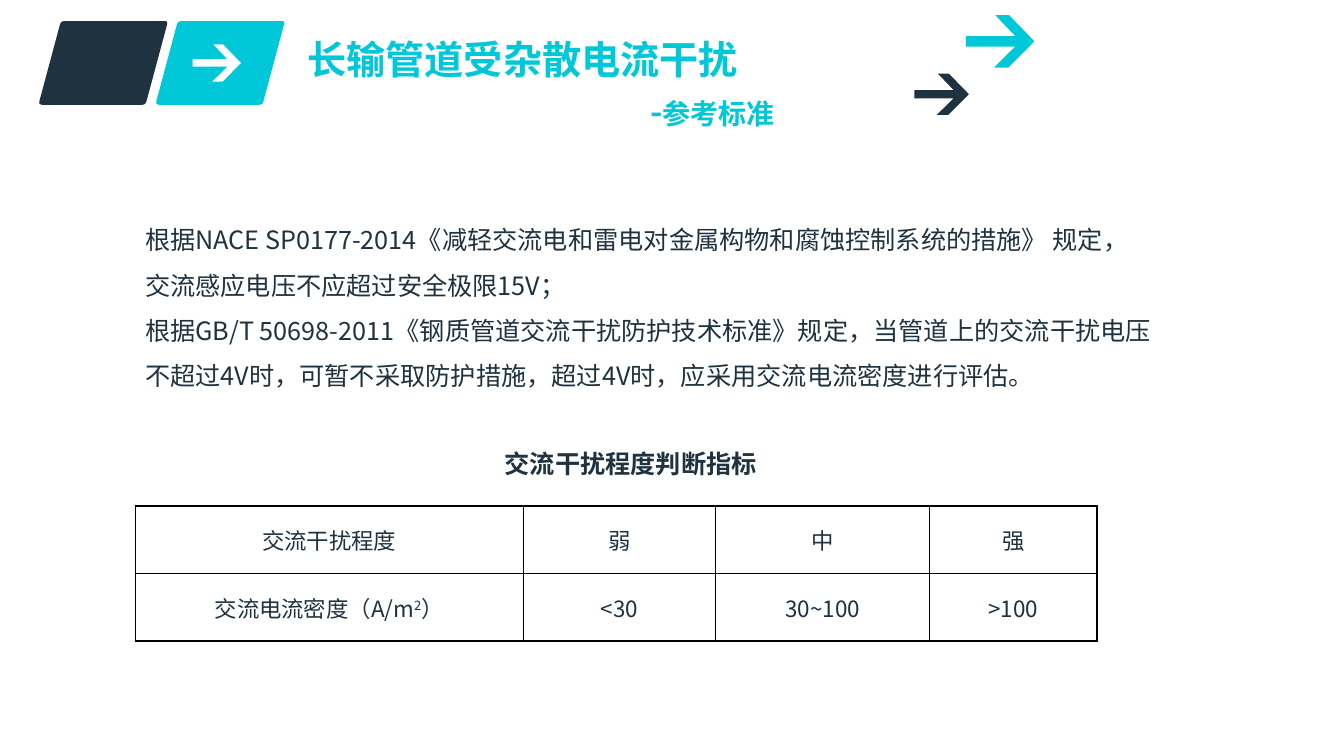
"""Build the slide on reference standards for stray current in pipelines."""
from dataclasses import dataclass

from lxml import etree
from pptx import Presentation
from pptx import util as u
from pptx.enum import text
from pptx.dml.color import RGBColor
from pptx.oxml import ns

PX = 9144
FONT = "Noto Sans CJK SC"
COLORS = {"cyan": "00C8D8", "navy": "1F3240", "white": "FFFFFF", "black": "000000"}
ARROW = [(1, .5), (.62, 1), (.41, 1), (.72, .6), (0, .6),
         (0, .4), (.72, .4), (.43, 0), (.63, 0)]
BADGE = [(.19, 0), (.98, 0), (.99, .01), (.99, .04), (.83, .96), (.82, .99), (.8, 1),
         (.02, 1), (0, .99), (0, .96), (.16, .04), (.17, .01)]


@dataclass(frozen=True)
class Outline:
    points: list[tuple[float, float]]
    left: int
    top: int
    width: int
    height: int
    color: str


@dataclass(frozen=True)
class Run:
    words: str
    size: int
    color: str = "navy"
    bold: bool = False
    superscript: bool = False


@dataclass(frozen=True)
class Line:
    runs: list[Run]
    margin: int = 0
    indent: int = 0
    spacing: float = 1.0
    before: int = 0
    centered: bool = False


@dataclass(frozen=True)
class TextBox:
    left: int
    top: int
    width: int
    height: int
    lines: list[Line]
    middle: bool = True


OUTLINES = [
    Outline(BADGE, 155, 21, 128, 83, "cyan"),
    Outline(BADGE, 39, 21, 128, 83, "navy"),
    Outline(ARROW, 191, 44, 48, 37, "white"),
    Outline(ARROW, 907, 73, 54, 41, "navy"),
    Outline(ARROW, 958, 15, 68, 52, "cyan"),
]
RULES = [
    "根据NACE SP0177-2014《减轻交流电和雷电对金属构物和腐蚀控制系统的措施》 规定，"
    "交流感应电压不应超过安全极限15V；",
    "根据GB/T 50698-2011《钢质管道交流干扰防护技术标准》规定，当管道上的交流干扰电压不超过4V时，"
    "可暂不采取防护措施，超过4V时，应采用交流电流密度进行评估。",
]
TEXT_BOXES = [
    TextBox(134, 203, 1018, 192,
            [Line([Run(rule, 18)], spacing=1.5) for rule in RULES], middle=False),
    TextBox(318, 440, 582, 40,
            [Line([Run("交流干扰程度判断指标", 18, bold=True)], indent=33, centered=True)]),
    TextBox(264, 48, 873, 70, [
        Line([Run("长输管道受杂散电流干扰", 28, "cyan", True)], margin=31),
        Line([Run("-", 24, "cyan", True), Run("参考标准", 20, "cyan", True)],
             margin=371, before=6),
    ]),
]
COLUMN_WIDTHS = [385, 191, 212, 166]
ROW_HEIGHT = 67
TABLE_ROWS = [
    [[Run(words, 16)] for words in ("交流干扰程度", "弱", "中", "强")],
    [[Run("交流电流密度（A/m", 16), Run("2", 16, superscript=True), Run("）", 16)],
     *([Run(words, 16)] for words in ("<30", "30~100", ">100"))],
]


def rgb(name: str) -> RGBColor:
    return RGBColor.from_string(COLORS[name])


def draw_outline(slide, outline: Outline) -> None:
    points = [((outline.left + x * outline.width) * PX, (outline.top + y * outline.height) * PX)
              for x, y in outline.points]
    builder = slide.shapes.build_freeform(*points[0])
    builder.add_line_segments(points[1:], close=True)
    shape = builder.convert_to_shape()
    shape.shadow.inherit = False
    shape.fill.solid()
    shape.fill.fore_color.rgb = rgb(outline.color)
    shape.line.fill.background()


def add_run(paragraph, item: Run) -> None:
    run = paragraph.add_run()
    run.text = item.words
    run.font.size = u.Pt(item.size)
    run.font.bold = item.bold
    run.font.color.rgb = rgb(item.color)
    run.font.name = FONT
    properties = run._r.get_or_add_rPr()
    etree.SubElement(properties, ns.qn("a:ea"), typeface=FONT)
    if item.superscript:
        properties.set("baseline", "30000")


def fill_lines(frame, lines: list[Line]) -> None:
    for index, line in enumerate(lines):
        paragraph = frame.add_paragraph() if index else frame.paragraphs[0]
        paragraph.line_spacing = line.spacing
        paragraph.alignment = text.PP_ALIGN.CENTER if line.centered else text.PP_ALIGN.LEFT
        if line.before:
            paragraph.space_before = u.Pt(line.before)
        properties = paragraph._p.get_or_add_pPr()
        properties.set("marL", str(line.margin * PX))
        properties.set("indent", str(line.indent * PX))
        for run in line.runs:
            add_run(paragraph, run)


def draw_text_box(slide, box: TextBox) -> None:
    shape = slide.shapes.add_textbox(*(value * PX for value in
                                       (box.left, box.top, box.width, box.height)))
    frame = shape.text_frame
    frame.word_wrap = True
    frame.vertical_anchor = text.MSO_ANCHOR.MIDDLE if box.middle else text.MSO_ANCHOR.TOP
    fill_lines(frame, box.lines)


def add_borders(cell) -> None:
    properties = cell._tc.get_or_add_tcPr()
    for index, side in enumerate(("lnL", "lnR", "lnT", "lnB")):
        border = etree.Element(ns.qn(f"a:{side}"), w=str(u.Pt(1)))
        fill = etree.SubElement(border, ns.qn("a:solidFill"))
        etree.SubElement(fill, ns.qn("a:srgbClr"), val=COLORS["black"])
        properties.insert(index, border)


def draw_table(slide, left: int, top: int) -> None:
    frame = slide.shapes.add_table(
        len(TABLE_ROWS), len(COLUMN_WIDTHS), left * PX, top * PX,
        sum(COLUMN_WIDTHS) * PX, len(TABLE_ROWS) * ROW_HEIGHT * PX)
    table = frame.table
    table.first_row = table.horz_banding = False
    for column, width in zip(table.columns, COLUMN_WIDTHS):
        column.width = width * PX
    for row, contents in zip(table.rows, TABLE_ROWS):
        row.height = ROW_HEIGHT * PX
        for cell, runs in zip(row.cells, contents):
            cell.fill.background()
            cell.vertical_anchor = text.MSO_ANCHOR.MIDDLE
            cell.margin_top = cell.margin_bottom = 0
            fill_lines(cell.text_frame, [Line(runs, centered=True)])
            add_borders(cell)


def main() -> None:
    presentation = Presentation()
    presentation.slide_width = 1333 * PX
    presentation.slide_height = 750 * PX
    slide = presentation.slides.add_slide(presentation.slide_layouts[6])
    for outline in OUTLINES:
        draw_outline(slide, outline)
    draw_table(slide, 134, 502)
    for box in TEXT_BOXES:
        draw_text_box(slide, box)
    presentation.save("out.pptx")


if __name__ == "__main__":
    main()
